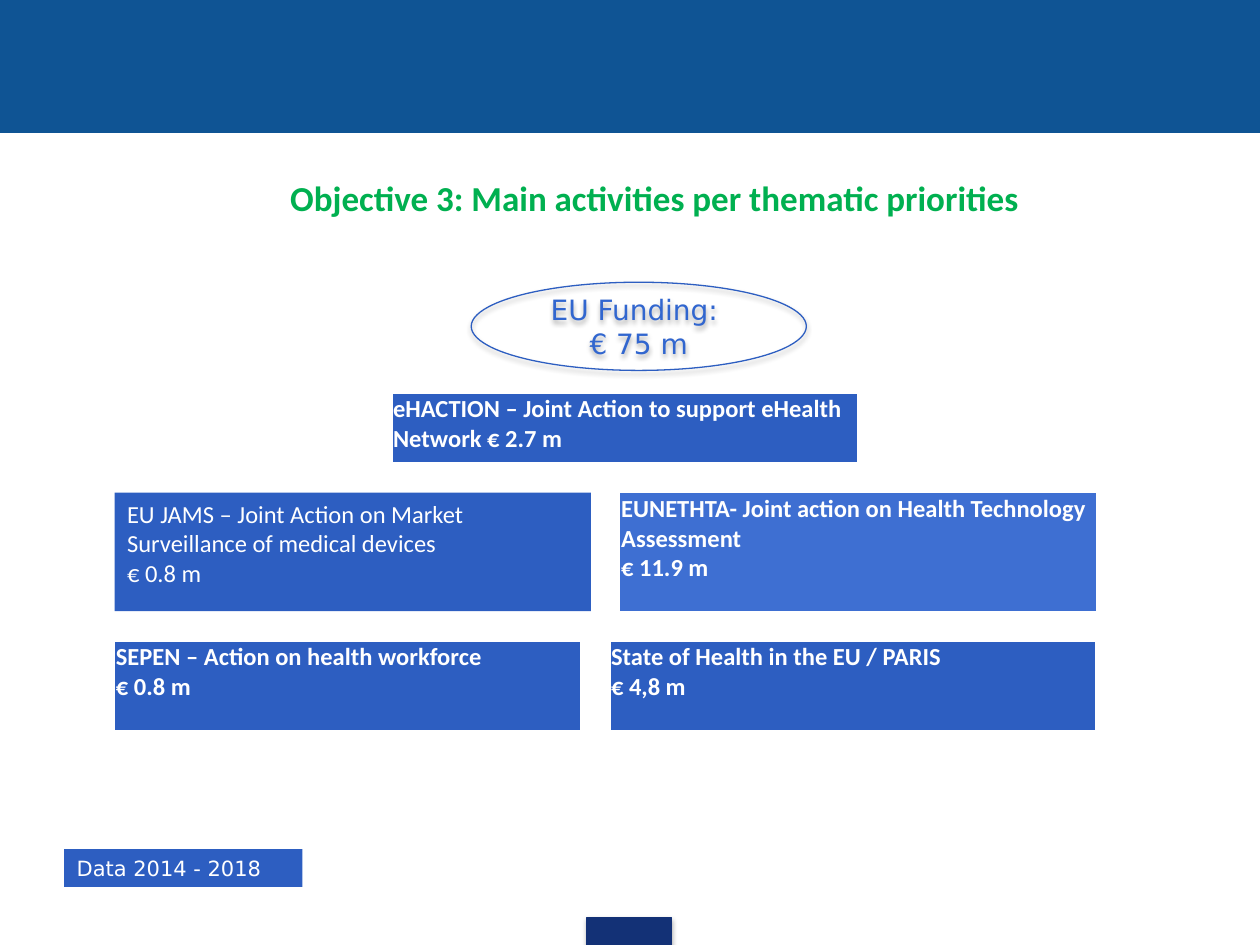
from lxml import etree
from pptx import Presentation
from pptx.dml.color import RGBColor
from pptx.enum import shapes, text
from pptx.oxml import ns, parse_xml
from pptx.util import Inches, Pt

BAND, TAB = "0F5494", "133176"
BLUE, LIGHT_BLUE, TEXT_BLUE = "2D5EC1", "3E6FD2", "3166CF"
GREEN, WHITE = "00B050", "FFFFFF"
RECT, OVAL = shapes.MSO_SHAPE.RECTANGLE, shapes.MSO_SHAPE.OVAL
TOP, MIDDLE = text.MSO_ANCHOR.TOP, text.MSO_ANCHOR.MIDDLE
LEFT, CENTER = text.PP_ALIGN.LEFT, text.PP_ALIGN.CENTER

SHADOW = f"""<a:effectLst {ns.nsdecls('a')}>
  <a:outerShdw blurRad="39370" dist="22860" dir="5400000" rotWithShape="0">
    <a:srgbClr val="000000"><a:alpha val="35000"/></a:srgbClr>
  </a:outerShdw>
</a:effectLst>"""


def rgb(value):
    return RGBColor.from_string(value)


def write(frame, lines, size=14, font="Calibri", color=WHITE, bold=False,
          align=LEFT):
    """Fill a text frame with one paragraph per line."""
    frame.word_wrap = True
    for i, line in enumerate(lines):
        paragraph = frame.paragraphs[0] if i == 0 else frame.add_paragraph()
        paragraph.alignment = align
        run = paragraph.add_run()
        run.text = line
        run.font.size = Pt(size)
        run.font.name = font
        run.font.bold = bold
        run.font.color.rgb = rgb(color)


class FundingSlide:
    def __init__(self, deck):
        self.slide = deck.slides.add_slide(deck.slide_layouts[5])

    def title(self, box, wording):
        heading = self.slide.shapes.title
        heading.left, heading.top, heading.width, heading.height = map(Inches, box)
        heading.text_frame.vertical_anchor = MIDDLE
        write(heading.text_frame, [wording], size=20, color=GREEN, bold=True,
              align=CENTER)

    def shape(self, kind, box, fill=None, line=None, shadow=False, lines=(),
              anchor=TOP, **style):
        block = self.slide.shapes.add_shape(kind, *map(Inches, box))
        if fill:
            block.fill.solid()
            block.fill.fore_color.rgb = rgb(fill)
        else:
            block.fill.background()
        if line:
            block.line.color.rgb = rgb(line)
            block.line.width = Pt(0.75)
        else:
            block.line.fill.background()
        block.shadow.inherit = False
        if shadow:
            properties = block._element.spPr
            properties.replace(properties.find(ns.qn("a:effectLst")),
                               parse_xml(SHADOW))
        block.text_frame.vertical_anchor = anchor
        write(block.text_frame, lines, **style)

    def card(self, box, lines, fill=BLUE, border=True):
        """Add a one-cell table naming an action and its funding."""
        table = self.slide.shapes.add_table(1, 1, *map(Inches, box)).table
        table.first_row = table.horz_banding = False
        cell = table.cell(0, 0)
        cell.margin_left = cell.margin_top = cell.margin_right = Inches(0.01)
        cell.margin_bottom = 0
        cell.fill.solid()
        cell.fill.fore_color.rgb = rgb(fill)
        properties = cell._tc.get_or_add_tcPr()
        for i, side in enumerate(("lnL", "lnR", "lnT", "lnB")):
            edge = etree.Element(ns.qn(f"a:{side}"), w=str(Pt(1)))
            if border:
                paint = etree.SubElement(edge, ns.qn("a:solidFill"))
                etree.SubElement(paint, ns.qn("a:srgbClr"), val=WHITE)
            else:
                etree.SubElement(edge, ns.qn("a:noFill"))
            properties.insert(i, edge)
        write(cell.text_frame, lines, bold=True)


def main():
    deck = Presentation()
    deck.slide_width, deck.slide_height = Inches(10), Inches(7.5)
    page = FundingSlide(deck)

    page.shape(RECT, (0, 0, 10, 1.05), fill=BAND, line=BAND)
    page.shape(RECT, (4.66, 7.28, 0.67, 0.22), fill=TAB, line=TAB, shadow=True)
    page.title((0.39, 1.2, 9.61, 0.74),
               "Objective 3: Main activities per thematic priorities")
    page.shape(RECT, (0.51, 6.74, 1.89, 0.3), fill=BLUE,
               lines=["Data 2014 - 2018"], size=12, font="DejaVu Sans")
    page.shape(OVAL, (3.74, 2.24, 2.66, 0.7), line=BLUE, shadow=True,
               lines=["EU Funding: ", "€ 75 m"], anchor=MIDDLE, size=16,
               font="DejaVu Sans", color=TEXT_BLUE, align=CENTER)

    left, right = 0.91, 8.7
    upper, lower = 3.91, 5.09
    page.card((3.11, 3.12, 3.7, 0.55),
              ["eHACTION – Joint Action to support eHealth Network € 2.7 m"])
    page.shape(RECT, (left, upper, 3.78, 0.94), fill=BLUE,
               lines=["EU JAMS – Joint Action on Market Surveillance of "
                      "medical devices", "€ 0.8 m"])
    page.card((right - 3.78, upper, 3.78, 0.94),
              ["EUNETHTA- Joint action on Health Technology Assessment",
               "€ 11.9 m"], fill=LIGHT_BLUE, border=False)
    page.card((left, lower, 3.7, 0.71),
              ["SEPEN – Action on health workforce", "€ 0.8 m"])
    page.card((right - 3.86, lower, 3.86, 0.71),
              ["State of Health in the EU / PARIS", "€ 4,8 m"])

    deck.save("out.pptx")


if __name__ == "__main__":
    main()
